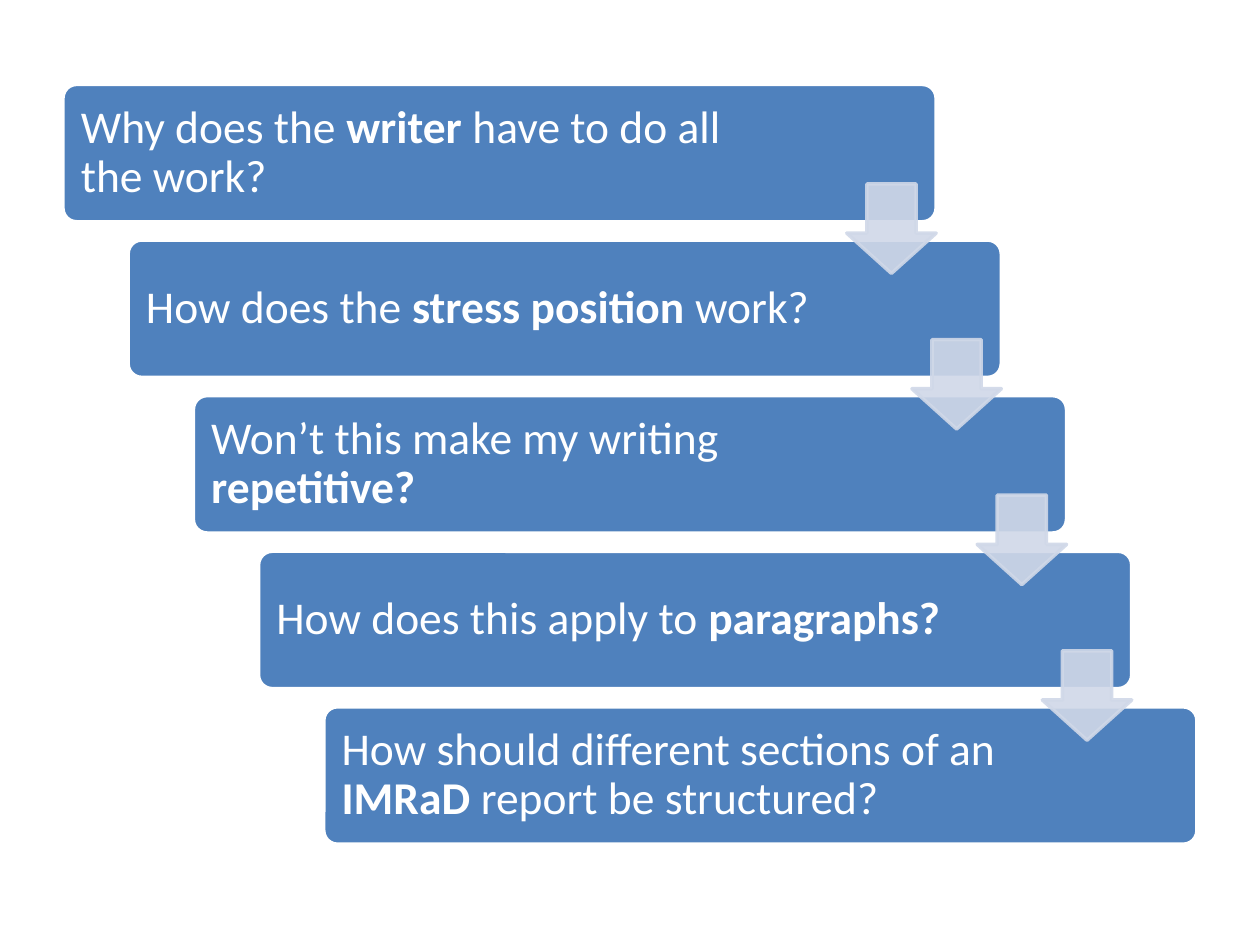
from lxml import etree
from pptx import Presentation
from pptx.dml.color import RGBColor
from pptx.enum.shapes import MSO_SHAPE
from pptx.enum.text import MSO_ANCHOR, PP_ALIGN
from pptx.oxml.ns import qn
from pptx.util import Inches, Pt

ROUND_RECT = MSO_SHAPE.ROUNDED_RECTANGLE
DOWN_ARROW = MSO_SHAPE.DOWN_ARROW
MIDDLE = MSO_ANCHOR.MIDDLE
LEFT = PP_ALIGN.LEFT

BLUE = RGBColor(0x4F, 0x81, 0xBD)
PALE_BLUE = RGBColor(0xD0, 0xD8, 0xE8)
WHITE = RGBColor(0xFF, 0xFF, 0xFF)

QUESTIONS = [
    [("Why does the ", False), ("writer", True), (" have to do all the work?", False)],
    [("How does the ", False), ("stress position", True), (" work?", False)],
    [("Won’t this make my writing ", False), ("repetitive?", True)],
    [("How does this apply to ", False), ("paragraphs?", True)],
    [("How should different sections of an ", False), ("IMRaD", True),
     (" report be structured?", False)],
]

STEP_WIDTH, STEP_HEIGHT = 6.93, 1.09
ARROW_SIZE = 0.71
FRAME_FORMAT = {
    "word_wrap": True,
    "vertical_anchor": MIDDLE,
    "margin_left": Inches(0.11),
    "margin_top": Inches(0.11),
    "margin_right": Inches(1.35),
    "margin_bottom": Inches(0.11),
}
FONT_FORMAT = {"name": "Calibri", "size": Pt(26)}


def set_attrs(obj, values):
    for name, value in values.items():
        setattr(obj, name, value)


def add_filled_shape(slide, kind, box, adjustments, fill, line):
    sp = slide.shapes.add_shape(kind, *(Inches(v) for v in box))
    sp.shadow.inherit = False
    for i, value in enumerate(adjustments):
        sp.adjustments[i] = value
    sp.fill.solid()
    sp.fill.fore_color.rgb = fill
    sp.line.color.rgb = line
    sp.line.width = Pt(2)
    return sp


def add_step(slide, box, question):
    sp = add_filled_shape(slide, ROUND_RECT, box, [0.1], BLUE, WHITE)
    tf = sp.text_frame
    set_attrs(tf, FRAME_FORMAT)
    p = tf.paragraphs[0]
    set_attrs(p, {"alignment": LEFT, "line_spacing": 0.9})
    for text, bold in question:
        r = p.add_run()
        r.text = text
        set_attrs(r.font, FONT_FORMAT)
        r.font.bold = bold
        r.font.color.rgb = WHITE


def add_arrow(slide, box):
    sp = add_filled_shape(slide, DOWN_ARROW, box, [0.55, 0.45], PALE_BLUE, PALE_BLUE)
    for color in sp._element.spPr.iter(qn("a:srgbClr")):
        etree.SubElement(color, qn("a:alpha")).set("val", "90000")


def add_staircase(slide, left, top, width, height):
    last = len(QUESTIONS) - 1
    dx = (width - STEP_WIDTH) / last
    dy = (height - STEP_HEIGHT) / last
    for i, question in enumerate(QUESTIONS):
        add_step(slide, (left + i * dx, top + i * dy, STEP_WIDTH, STEP_HEIGHT), question)
    for i in range(last):
        x = left + i * dx + STEP_WIDTH - ARROW_SIZE
        y = top + i * dy + 0.79
        add_arrow(slide, (x, y, ARROW_SIZE, ARROW_SIZE))


def main():
    prs = Presentation()
    prs.slide_width = Inches(10)
    prs.slide_height = Inches(7.5)
    slide = prs.slides.add_slide(prs.slide_layouts[6])
    add_staircase(slide, 0.5, 0.67, 9, 6.03)
    prs.save("out.pptx")


if __name__ == "__main__":
    main()
